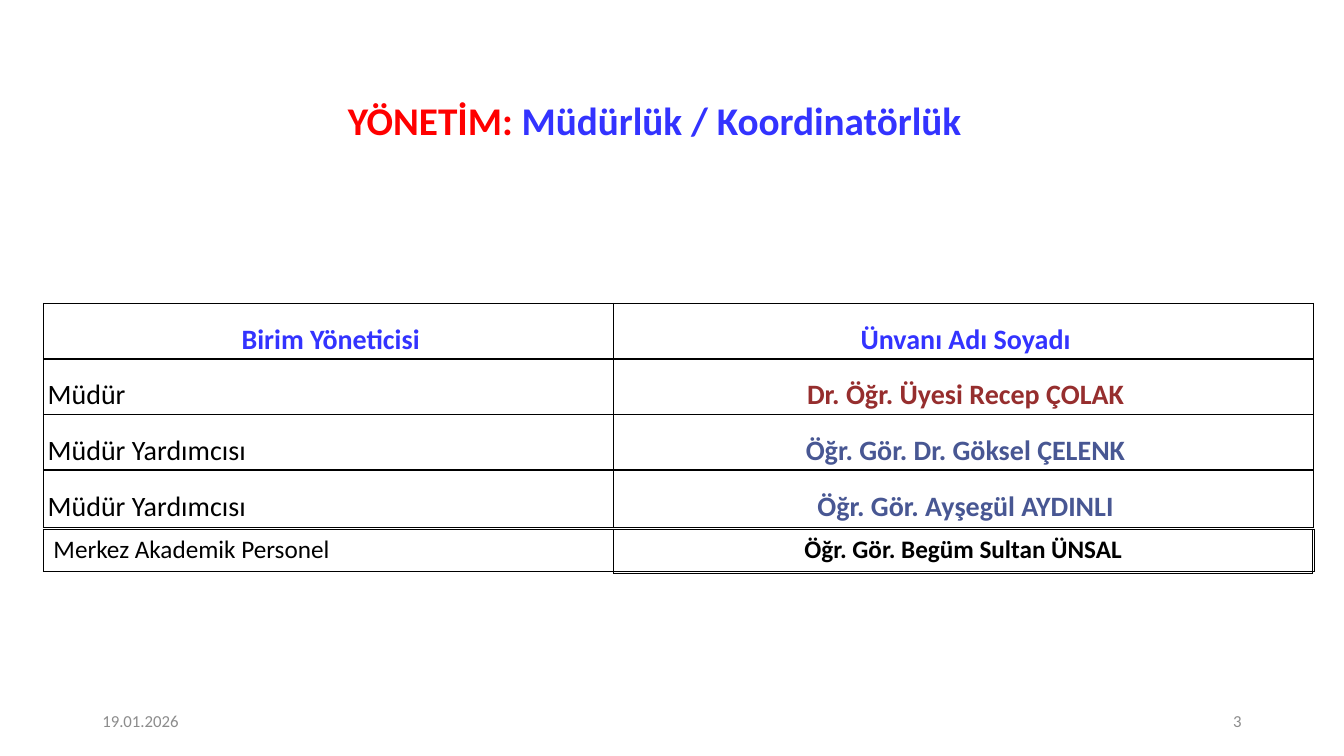
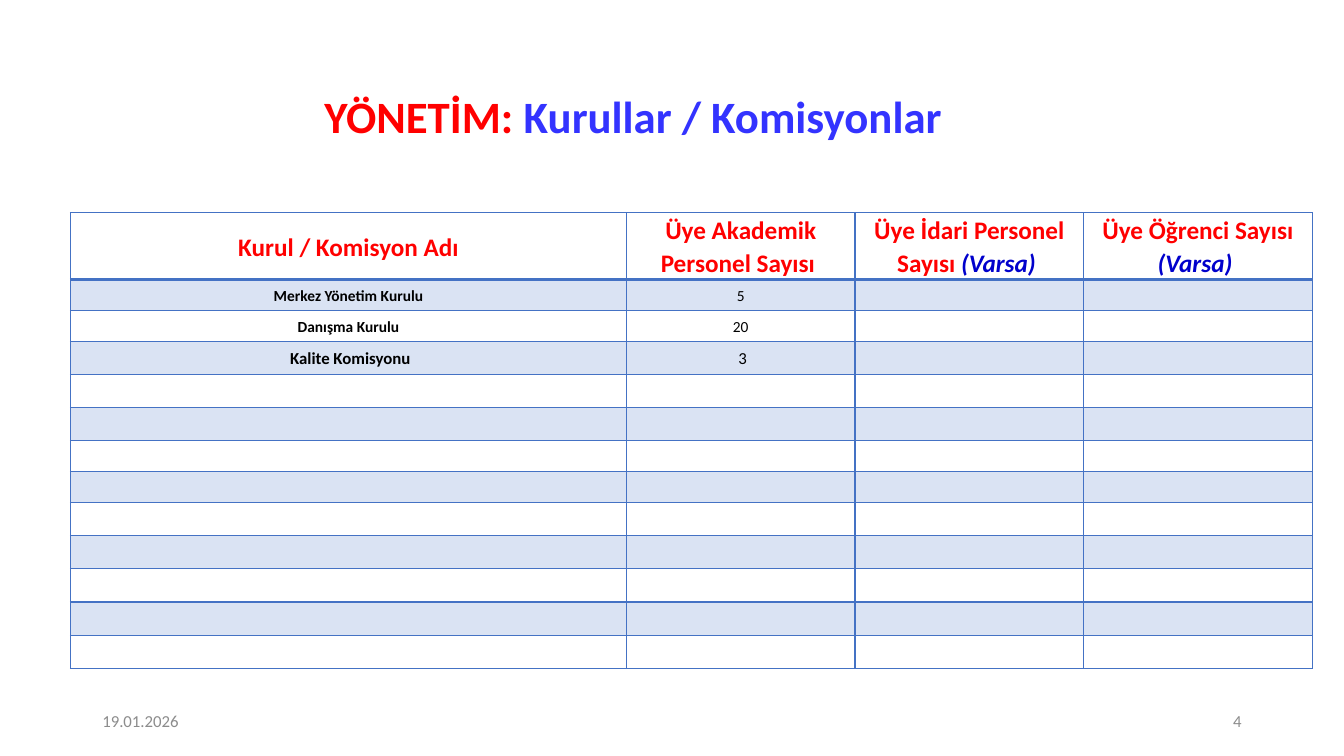
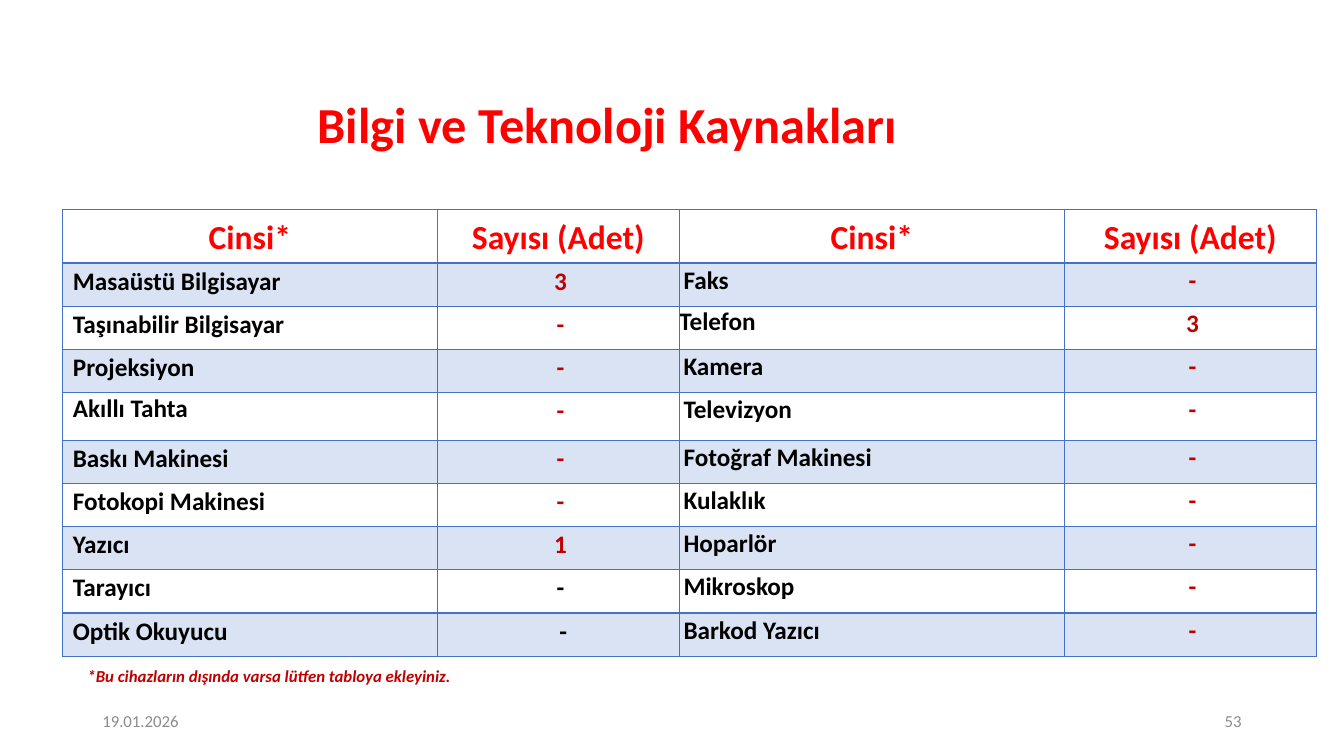
from dataclasses import dataclass
from lxml.etree import SubElement
from pptx import Presentation
from pptx.dml.color import RGBColor
from pptx.enum.text import MSO_ANCHOR as Anchor, MSO_AUTO_SIZE as AutoSize, PP_ALIGN as Align
from pptx.oxml.ns import qn
from pptx.util import Pt

FONT = "Calibri"
DATE = "19.01.2026"
COLORS = {
    "red": "FF0000",
    "blue": "3333FF",
    "navy": "0000CC",
    "black": "000000",
    "maroon": "962E2E",
    "slate": "485793",
    "crimson": "C00000",
    "gray": "8C8C8C",
    "grid": "4472C4",
    "band": "DAE3F3",
}


@dataclass
class Box:
    left: float
    top: float
    width: float
    height: float

    def lengths(self):
        return [Pt(value) for value in (self.left, self.top, self.width, self.height)]


@dataclass
class Run:
    text: str
    color: str = "black"
    bold: bool = True
    italic: bool = False


@dataclass
class Style:
    size: float = 18
    align: Align = Align.LEFT
    line_spacing: float = 1
    space_after: float = 0
    indent: float = 0


def write_runs(text_frame, runs, style):
    paragraph = text_frame.paragraphs[0]
    paragraph.alignment = style.align
    paragraph.line_spacing = style.line_spacing
    paragraph.space_before = Pt(0)
    paragraph.space_after = Pt(style.space_after)
    properties = paragraph._p.get_or_add_pPr()
    properties.set("marL", str(Pt(style.indent)))
    properties.set("indent", "0")
    for item in runs:
        run = paragraph.add_run()
        run.text = item.text
        font = run.font
        font.name = FONT
        font.size = Pt(style.size)
        font.bold = item.bold
        font.italic = item.italic
        font.color.rgb = RGBColor.from_string(COLORS[item.color])
    if not runs:
        SubElement(paragraph._p, qn("a:endParaRPr"), sz=str(int(style.size * 100)))


def add_text(slide, box, run, size=12, align=Align.LEFT, anchor=Anchor.MIDDLE):
    text_frame = slide.shapes.add_textbox(*box.lengths()).text_frame
    text_frame.word_wrap = True
    text_frame.vertical_anchor = anchor
    write_runs(text_frame, [run], Style(size, align))


def add_slide(presentation, title_box, title_runs, title_size, number):
    slide = presentation.slides.add_slide(presentation.slide_layouts[5])
    title = slide.shapes.title
    title.left, title.top, title.width, title.height = title_box.lengths()
    title.text_frame.auto_size = AutoSize.NONE
    title.text_frame.word_wrap = True
    title.text_frame.vertical_anchor = Anchor.MIDDLE
    write_runs(title.text_frame, title_runs, Style(title_size, Align.CENTER, 0.9))
    add_footer(slide, Box(66, 500, 828, 29), number)
    return slide


def add_footer(slide, box, number):
    width = 216
    right = box.left + box.width - width
    add_text(slide, Box(box.left, box.top, width, box.height), Run(DATE, "gray", False))
    add_text(slide, Box(right, box.top, width, box.height), Run(number, "gray", False), align=Align.RIGHT)


def set_borders(cell, color, bottom_width):
    properties = cell._tc.get_or_add_tcPr()
    for side, width in (("L", 1), ("R", 1), ("T", 1), ("B", bottom_width)):
        line = SubElement(properties, qn(f"a:ln{side}"), w=str(Pt(width)))
        fill = SubElement(line, qn("a:solidFill"))
        SubElement(fill, qn("a:srgbClr"), val=COLORS[color])


def add_grid(slide, box, columns, rows, border, banded=False):
    table = slide.shapes.add_table(len(rows), len(columns), *box.lengths()).table
    table.first_row = table.horz_banding = False
    for column, share in zip(table.columns, columns):
        column.width = Pt(box.width * share / sum(columns))
    for row, share in zip(table.rows, rows):
        row.height = Pt(box.height * share / sum(rows))
    for index, row in enumerate(table.rows):
        for cell in row.cells:
            set_borders(cell, border, 2 if banded and index == 0 else 1)
            if banded and index % 2:
                cell.fill.solid()
                cell.fill.fore_color.rgb = RGBColor.from_string(COLORS["band"])
            else:
                cell.fill.background()
    return table


def fill_cell(cell, runs, style, margins=(0, 0, 0, 0), anchor=Anchor.MIDDLE):
    cell.margin_left, cell.margin_top, cell.margin_right, cell.margin_bottom = map(Pt, margins)
    cell.vertical_anchor = anchor
    write_runs(cell.text_frame, runs, style)


def add_managers(slide, box):
    people = [
        (Run("Birim Yöneticisi", "blue"), Run("Ünvanı Adı Soyadı", "blue")),
        (Run("Müdür", bold=False), Run("Dr. Öğr. Üyesi Recep ÇOLAK", "maroon")),
        (Run("Müdür Yardımcısı", bold=False), Run("Öğr. Gör. Dr. Göksel ÇELENK", "slate")),
        (Run("Müdür Yardımcısı", bold=False), Run("Öğr. Gör. Ayşegül AYDINLI", "slate")),
    ]
    table = add_grid(slide, box, [5.66, 6.94], [39.7, 39.7, 39.7, 41], "black")
    for row, pair in enumerate(people):
        for column, run in enumerate(pair):
            align = Align.CENTER if row == 0 or column else Align.LEFT
            fill_cell(table.cell(row, column), [run], Style(20, align, 1.5, indent=3))


def add_staff_row(slide, box, run, align):
    table = add_grid(slide, box, [1], [1], "black")
    fill_cell(table.cell(0, 0), [run], Style(18, align), (7.2, 3.6, 7.2, 3.6), Anchor.TOP)


def add_boards(slide, box):
    headers = [
        [Run("Kurul / Komisyon Adı", "red")],
        [Run("Üye Akademik Personel Sayısı ", "red")],
        [Run("Üye İdari Personel Sayısı ", "red"), Run("(Varsa) ", "navy", italic=True)],
        [Run("Üye Öğrenci Sayısı ", "red"), Run("(Varsa) ", "navy", italic=True)],
    ]
    boards = [("Merkez Yönetim Kurulu", "5", 11), ("Danışma Kurulu", "20", 11), (" Kalite Komisyonu", " 3", 12)]
    rows = [47.8] + [22] * 2 + [23.7] * 3 + [22] * 2 + [23.7] * 5
    contents = [(headers, 18)]
    contents += [([[Run(name)], [Run(count, bold=False)], [], []], size) for name, count, size in boards]
    contents += [([[]] * 4, 11)] * (len(rows) - len(contents))
    table = add_grid(slide, box, [5.52, 2.27, 2.27, 2.27], rows, "grid", True)
    for row, (cells, size) in enumerate(contents):
        for column, runs in enumerate(cells):
            side = 0.7 if column else 3.6
            fill_cell(table.cell(row, column), runs, Style(size, Align.CENTER, 1.07), (side, 0.7, side, 0))


def add_devices(slide, box):
    devices = [
        ("Masaüstü Bilgisayar", "3", "Faks", "-"),
        ("Taşınabilir Bilgisayar", "-", "Telefon", "3"),
        ("Projeksiyon", "-", "Kamera", "-"),
        ("Akıllı Tahta", "-", "Televizyon", "-"),
        ("Baskı Makinesi", "-", "Fotoğraf Makinesi", "-"),
        ("Fotokopi Makinesi", "-", "Kulaklık", "-"),
        ("Yazıcı", "1", "Hoparlör", "-"),
        ("Tarayıcı", "-", "Mikroskop", "-"),
        ("Optik Okuyucu", " -", "Barkod Yazıcı", "-"),
    ]
    special_styles = {"Telefon": Style(), "Akıllı Tahta": Style(indent=3)}
    rows = [38.3] + [31] * 3 + [34] + [31] * 5
    table = add_grid(slide, box, [3.72, 2.4, 3.82, 2.5], rows, "grid", True)
    for row, texts in enumerate([("Cinsi*", "Sayısı (Adet)") * 2] + devices):
        for column, text in enumerate(texts):
            margins = (4.5, 0.7, 4.5, 0) if column < 2 else (0, 0, 0, 0)
            is_count = column % 2 == 1
            if row == 0:
                color, anchor = "red", Anchor.MIDDLE
                style = Style(24, Align.CENTER, 1.07, 8)
            else:
                plain_count = column == 1 and row > 7
                color = "crimson" if is_count and not plain_count else "black"
                anchor = Anchor.TOP
                align = Align.CENTER if is_count else Align.LEFT
                style = special_styles.get(text, Style(18, align, 1.07, 8, 3))
            fill_cell(table.cell(row, column), [Run(text, color)], style, margins, anchor)


def main():
    presentation = Presentation()
    presentation.slide_width, presentation.slide_height = Pt(960), Pt(540)
    section = Run("YÖNETİM: ", "red")

    managers = add_slide(
        presentation, Box(82, 60.5, 771, 55), [section, Run("Müdürlük / Koordinatörlük", "blue")], 28, "3"
    )
    add_managers(managers, Box(31, 216.7, 907, 160.1))
    add_staff_row(managers, Box(31, 378, 908, 30.2), Run("Merkez Akademik Personel", bold=False), Align.LEFT)
    add_staff_row(managers, Box(438.5, 378, 499, 31.7), Run("Öğr. Gör. Begüm Sultan ÜNSAL"), Align.CENTER)

    boards = add_slide(
        presentation, Box(50.4, 56, 804, 57.6), [section, Run("Kurullar / Komisyonlar", "blue")], 32, "4"
    )
    add_boards(boards, Box(50.4, 152, 887, 325.4))

    devices = add_slide(
        presentation, Box(21, 61, 826, 60), [Run("Bilgi ve Teknoloji Kaynakları", "red")], 36, "53"
    )
    add_devices(devices, Box(44.6, 149.8, 895.7, 319))
    note = Run("*Bu cihazların dışında varsa lütfen tabloya ekleyiniz.", "crimson", italic=True)
    add_text(devices, Box(55.4, 472.3, 360, 21.6), note, anchor=Anchor.TOP)

    presentation.save("out.pptx")


if __name__ == "__main__":
    main()
